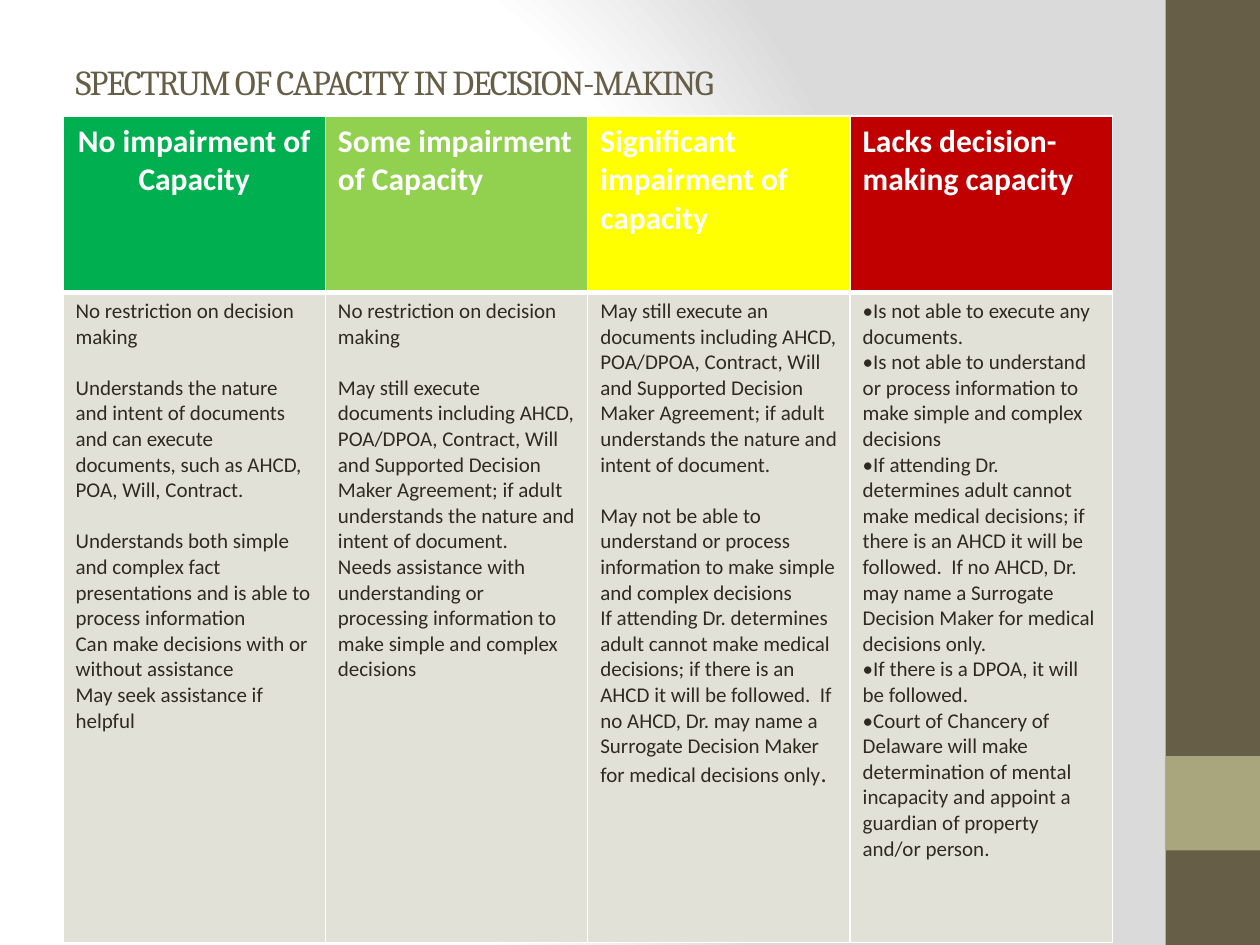
from lxml import etree
from pptx import Presentation
from pptx import util as u
from pptx.dml.color import RGBColor
from pptx.enum import shapes, text
from pptx.oxml import parse_xml
from pptx.oxml.ns import qn

NS = 'xmlns:a="http://schemas.openxmlformats.org/drawingml/2006/main"'
BROWN, KHAKI, INK, PALE, WHITE = "675E47", "A9A57C", "2F2B20", "E2E1D7", "FFFFFF"
LEFT, WIDTH = 0.5, 8.33
GAP = 14.6  # space of one line between groups, in points

EXECUTE = ("documents including AHCD, POA/DPOA, Contract, Will and Supported Decision "
           "Maker Agreement; if adult understands the nature and intent of document.")
ATTENDING = ("If attending Dr. determines adult cannot make medical decisions; if there is "
             "an AHCD it will be followed.  If no AHCD, Dr. may name a Surrogate Decision "
             "Maker for medical decisions only")
NO_LIMIT = "No restriction on decision making"

# Each column: heading, heading colour, groups of paragraphs
COLUMNS = [
    ("No impairment of Capacity", "00B050", [
        [NO_LIMIT],
        ["Understands the nature and intent of documents and can execute documents, "
         "such as AHCD, POA, Will, Contract."],
        ["Understands both simple and complex fact presentations and is able to "
         "process information",
         "Can make decisions with or without assistance",
         "May seek assistance if helpful"]]),
    ("Some impairment of Capacity", "92D050", [
        [NO_LIMIT],
        ["May still execute " + EXECUTE,
         "Needs assistance with understanding or processing information to make "
         "simple and complex decisions"]]),
    ("Significant impairment of capacity", "FFFF00", [
        ["May still execute an " + EXECUTE],
        ["May not be able to understand or process information to make simple and "
         "complex decisions",
         ATTENDING]]),
    ("Lacks decision-making capacity", "C00000", [
        ["•Is not able to execute any documents.",
         "•Is not able to understand or process information to make simple and "
         "complex decisions",
         "•" + ATTENDING + ".",
         "•If there is a DPOA, it will be followed.",
         "•Court of Chancery of Delaware will make determination of mental incapacity "
         "and appoint a guardian of property and/or person."]]),
]


def rgb(value):
    return RGBColor.from_string(value)


def add_run(p, words, size=12, font="Calibri", color=INK, bold=False, spacing=None):
    r = p.add_run()
    r.text = words
    r.font.size, r.font.name, r.font.bold = u.Pt(size), font, bold
    r.font.color.rgb = rgb(color)
    if spacing is not None:
        r._r.get_or_add_rPr().set("spc", str(spacing))
    return r


def set_background(s):
    s.background.fill.gradient()
    old = next(s._element.iter(qn("a:gradFill")))
    stops = "".join(f'<a:gs pos="{pos * 1000}"><a:srgbClr val="{c}"/></a:gs>'
                    for pos, c in ((0, WHITE), (75, WHITE), (100, "DADADA")))
    old.getparent().replace(old, parse_xml(
        f'<a:gradFill {NS} rotWithShape="1"><a:gsLst>{stops}</a:gsLst><a:path path="circle">'
        '<a:fillToRect l="20000" t="50000" r="100000" b="50000"/></a:path></a:gradFill>'))


def add_block(s, x, y, w, h, color):
    sp = s.shapes.add_shape(shapes.MSO_SHAPE.RECTANGLE, *map(u.Inches, (x, y, w, h)))
    sp.shadow.inherit = False
    sp.fill.solid()
    sp.fill.fore_color.rgb = rgb(color)
    sp.line.fill.background()


def set_title(s, words):
    sp = s.shapes.title
    sp.left, sp.top, sp.width, sp.height = map(u.Inches, (LEFT, 0.3, WIDTH, 0.7))
    tf = sp.text_frame
    tf.vertical_anchor = text.MSO_ANCHOR.MIDDLE
    p = tf.paragraphs[0]
    p.alignment = text.PP_ALIGN.LEFT
    add_run(p, words, size=20, font="Cambria", color=BROWN, spacing=-100)


def style_cell(cell, fill, **borders):
    """Fill a cell and give it white borders: side=width in points."""
    cell.fill.solid()
    cell.fill.fore_color.rgb = rgb(fill)
    tcPr = cell._tc.get_or_add_tcPr()
    for i, (side, width) in enumerate(borders.items()):
        ln = etree.fromstring(
            f'<a:ln{side} {NS} w="{u.Pt(width)}"><a:solidFill>'
            f'<a:srgbClr val="{WHITE}"/></a:solidFill></a:ln{side}>')
        tcPr.insert(i, ln)


def fill_body(tf, groups):
    p = tf.paragraphs[0]
    for g, group in enumerate(groups):
        for i, words in enumerate(group):
            if g or i:
                p = tf.add_paragraph()
            if g and i == 0:
                p.space_before = u.Pt(GAP)
            add_run(p, words)
    return p


def add_spectrum(s):
    frame = s.shapes.add_table(2, len(COLUMNS), *map(u.Inches, (LEFT, 0.92, WIDTH, 6.56)))
    table = frame.table
    for row, height in zip(table.rows, (1.4, 5.16)):
        row.height = u.Inches(height)
    for c, (heading, color, groups) in enumerate(COLUMNS):
        table.columns[c].width = u.Inches(WIDTH / len(COLUMNS))
        head, body = table.cell(0, c), table.cell(1, c)
        style_cell(head, color, L=1, R=1, T=1, B=3)
        style_cell(body, PALE, L=1, R=1, T=3, B=1)
        p = head.text_frame.paragraphs[0]
        p.alignment = text.PP_ALIGN.LEFT if c else text.PP_ALIGN.CENTER
        add_run(p, heading, size=18, color=WHITE, bold=True)
        last = fill_body(body.text_frame, groups)
        if groups[-1][-1] == ATTENDING:
            add_run(last, ".", size=14)


def main():
    prs = Presentation()
    prs.slide_width, prs.slide_height = u.Inches(10), u.Inches(7.5)
    s = prs.slides.add_slide(prs.slide_layouts[5])
    set_background(s)
    # Side band
    add_block(s, 9.25, 0, 0.75, 7.5, BROWN)
    add_block(s, 9.25, 6, 0.75, 0.75, KHAKI)
    # Content
    set_title(s, "SPECTRUM OF CAPACITY IN DECISION-MAKING")
    add_spectrum(s)
    prs.save("out.pptx")


if __name__ == "__main__":
    main()
